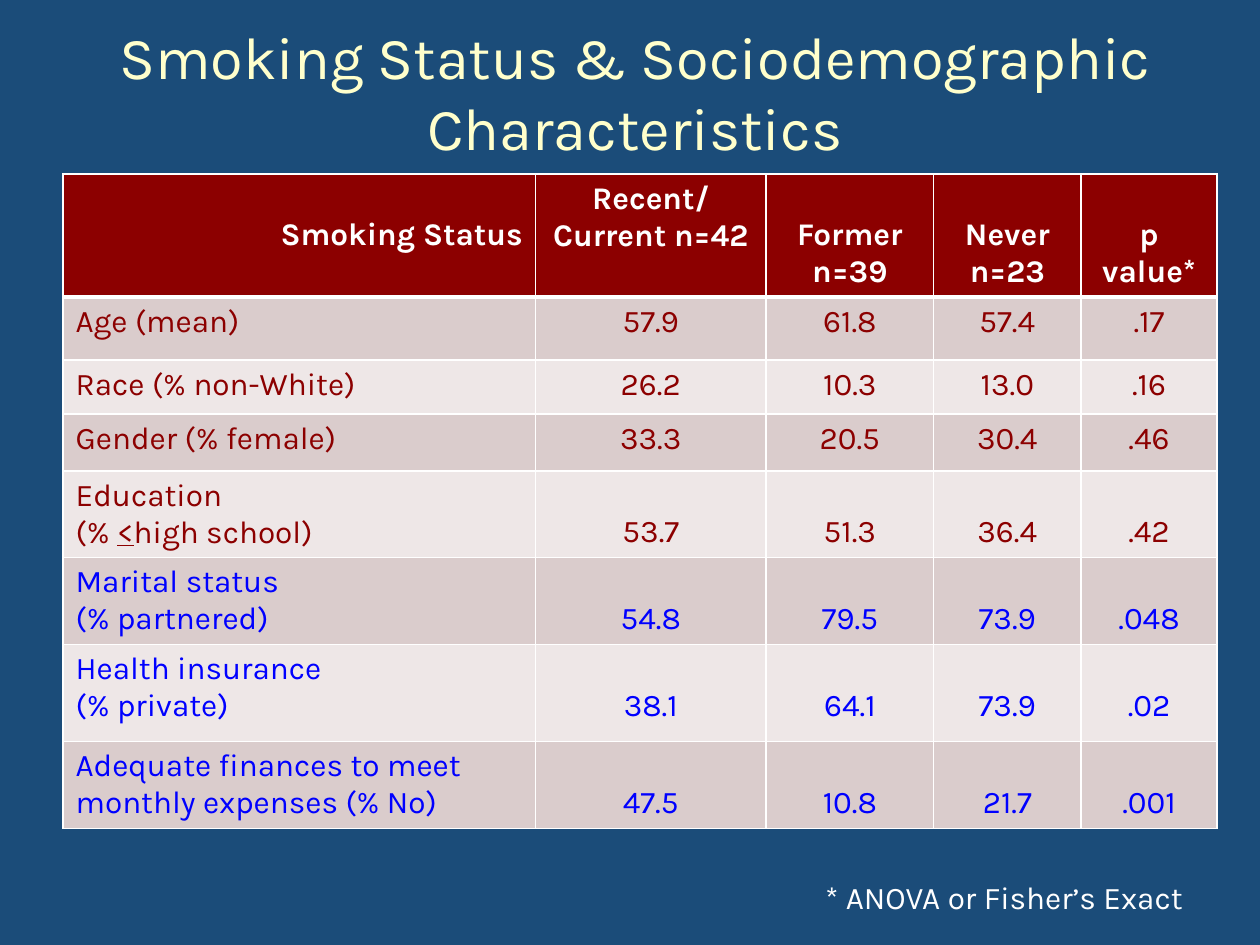
from pptx import Presentation
from pptx.dml.color import RGBColor
from pptx.enum.text import MSO_ANCHOR, MSO_AUTO_SIZE, PP_ALIGN
from pptx.oxml.xmlchemy import OxmlElement
from pptx.util import Inches, Pt

TITLE = "Smoking Status & Sociodemographic Characteristics"
NOTE = "* ANOVA or Fisher’s Exact"
HEAD = ["Smoking Status", "Recent/ Current n=42", "Former\nn=39", "Never n=23", "p value*"]
ROWS = [
    ("Age (mean)", "57.9", "61.8", "57.4", ".17"),
    ("Race (% non-White)", "26.2", "10.3", "13.0", ".16"),
    ("Gender (% female)", "33.3", "20.5", "30.4", ".46"),
    ("Education\n(% <high school)", "53.7", "51.3", "36.4", ".42"),
    ("Marital status\n(% partnered)", "54.8", "79.5", "73.9", ".048"),
    ("Health insurance\n(% private)", "38.1", "64.1", "73.9", ".02"),
    ("Adequate finances to meet monthly expenses (% No)", "47.5", "10.8", "21.7", ".001"),
]
WIDTHS = [3.75, 1.83, 1.33, 1.17, 1.08]
HEIGHTS = [0.97, 0.5, 0.43, 0.45, 0.69, 0.69, 0.77, 0.69]
TALL = 4
BLUE = 5
LINE = 0.29
PAD = 0.05
WHITE, RED = "FFFFFF", "8C0000"
BANDS = ["EEE7E7", "DACCCC"]


def color(code):
    return RGBColor.from_string(code)


def style(font, code, **extra):
    look = {"name": "Karla", "size": Pt(18), "bold": False, **extra}
    for key, val in look.items():
        setattr(font, key, val)
    font.color.rgb = color(code)


def write(frame, text, align, code, **extra):
    for num, line in enumerate(text.split("\n")):
        para = frame.paragraphs[0] if num == 0 else frame.add_paragraph()
        para.alignment = align
        pre, mark, post = line.partition("<")
        for part in filter(None, (pre, mark, post)):
            run = para.add_run()
            run.text = part
            style(run.font, code, **extra)
            if part == "<":
                run.font.underline = True


def border(cell, base):
    props = cell._tc.get_or_add_tcPr()
    for num, side in enumerate(("lnL", "lnR", "lnT", "lnB")):
        line = OxmlElement(f"a:{side}")
        line.set("w", str(Pt(base if side == "lnB" else 1)))
        fill = OxmlElement("a:solidFill")
        tint = OxmlElement("a:srgbClr")
        tint.set("val", WHITE)
        fill.append(tint)
        line.append(fill)
        props.insert(num, line)


def fill_cell(cell, row, col, text):
    head = row == 0
    drop = col != 1 if head else row >= TALL and col > 0
    cell.margin_top = Inches(PAD + LINE * drop)
    cell.fill.solid()
    cell.fill.fore_color.rgb = color(RED if head else BANDS[row % 2])
    first = PP_ALIGN.RIGHT if head else PP_ALIGN.LEFT
    align = first if col == 0 else PP_ALIGN.CENTER
    code = WHITE if head else "0000FF" if row >= BLUE else RED
    write(cell.text_frame, text, align, code, bold=head)
    border(cell, 3 if head else 1)


def main():
    deck = Presentation()
    deck.slide_width, deck.slide_height = Inches(10), Inches(7.5)
    slide = deck.slides.add_slide(deck.slide_layouts[5])
    slide.background.fill.solid()
    slide.background.fill.fore_color.rgb = color("1B4C79")

    title = slide.shapes.title
    place = {"left": 0.25, "top": 0.25, "width": 9.58, "height": 0.95}
    for key, val in place.items():
        setattr(title, key, Inches(val))
    title.text_frame.auto_size = MSO_AUTO_SIZE.NONE
    title.text_frame.vertical_anchor = MSO_ANCHOR.MIDDLE
    write(title.text_frame, TITLE, PP_ALIGN.CENTER, "FFFFCC", size=Pt(34))

    data = [HEAD, *ROWS]
    box = [Inches(n) for n in (0.5, 1.38, sum(WIDTHS), sum(HEIGHTS))]
    table = slide.shapes.add_table(len(data), len(HEAD), *box).table
    for col, wide in zip(table.columns, WIDTHS):
        col.width = Inches(wide)
    for row, high in zip(table.rows, HEIGHTS):
        row.height = Inches(high)
    for row, texts in enumerate(data):
        for col, text in enumerate(texts):
            fill_cell(table.cell(row, col), row, col, text)

    note = slide.shapes.add_textbox(*[Inches(n) for n in (6.42, 6.92, 3.1, 0.4)])
    note.text_frame.word_wrap = False
    note.text_frame.auto_size = MSO_AUTO_SIZE.SHAPE_TO_FIT_TEXT
    write(note.text_frame, NOTE, PP_ALIGN.CENTER, WHITE)
    deck.save("out.pptx")


if __name__ == "__main__":
    main()
